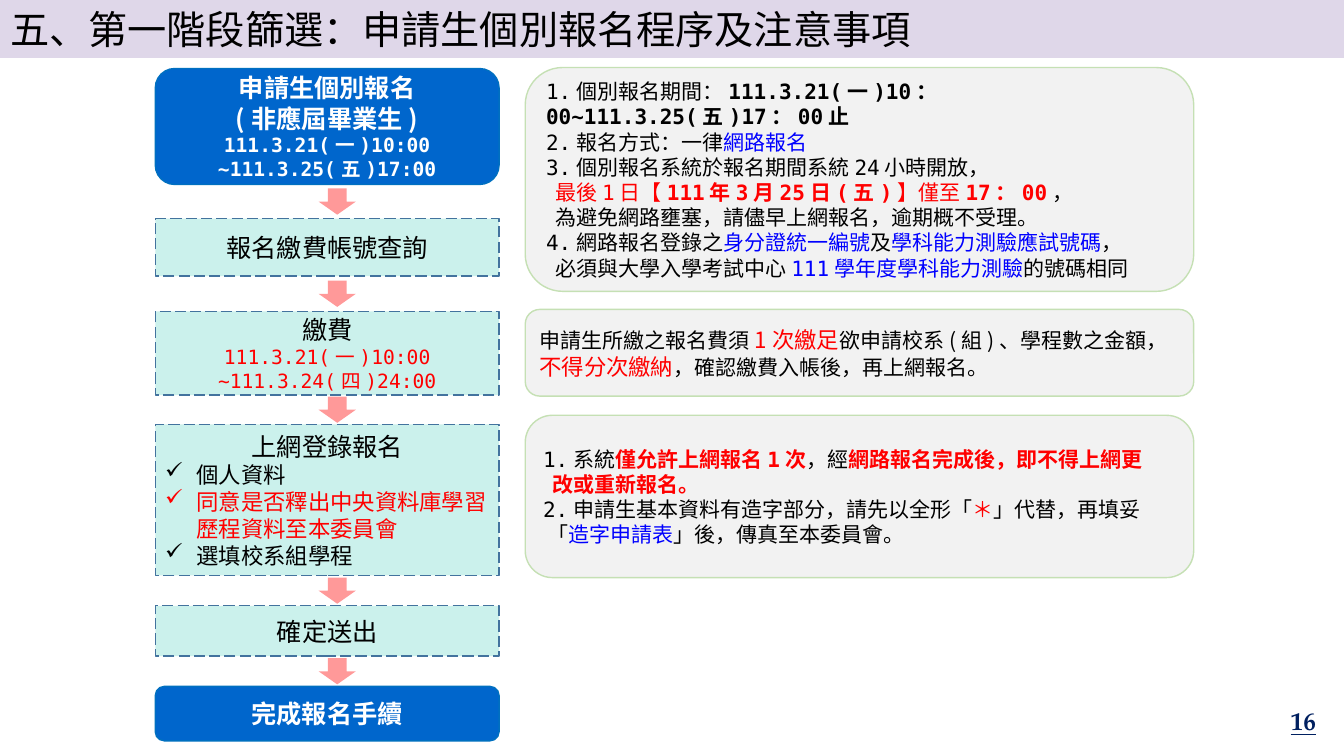
from itertools import pairwise
from lxml import etree
from pptx import Presentation
from pptx.dml.color import RGBColor
from pptx.enum import dml, shapes, text
from pptx.oxml import ns
from pptx.util import Inches, Pt

SANS, MONO, SERIF = "Noto Sans CJK JP", "DejaVu Sans Mono", "TeX Gyre Pagella"
BLACK, WHITE, RED, BLUE = "000000", "FFFFFF", "FF0000", "0000FF"
RECT, ROUND = shapes.MSO_SHAPE.RECTANGLE, shapes.MSO_SHAPE.ROUNDED_RECTANGLE
LEFT, CENTER, RIGHT = text.PP_ALIGN.LEFT, text.PP_ALIGN.CENTER, text.PP_ALIGN.RIGHT
STEP_X, STEP_W, NOTE_X, NOTE_W = 1.54, 3.41, 5.21, 6.63


def rgb(value):
    return RGBColor.from_string(value)


def add_run(p, words, size, color=BLACK, bold=False, font=SANS):
    r = p.add_run()
    r.text = words
    f = r.font
    f.size, f.name, f.bold = Pt(size), font, bold
    f.color.rgb = rgb(color)
    etree.SubElement(r._r.get_or_add_rPr(), ns.qn("a:ea"), typeface=SANS)
    return r


def add_line(tf, runs, align=LEFT, indent=0, bullet=None):
    """Add a paragraph of (words, size, color, bold, font) runs."""
    p = tf.paragraphs[0] if not tf.text else tf.add_paragraph()
    p.alignment = align
    p.space_before = Pt(0)
    p.line_spacing = Pt(1.2 * max(run[1] for run in runs))
    pPr = p._p.get_or_add_pPr()
    pPr.set("marL", str(Inches(indent)))
    if bullet:
        pPr.set("indent", str(-Inches(indent)))
        etree.SubElement(pPr, ns.qn("a:buChar"), char=bullet)
    for run in runs:
        add_run(p, *run)


def style_box(sp, fill, line, dash=None):
    sp.fill.solid()
    sp.fill.fore_color.rgb = rgb(fill)
    sp.line.color.rgb = rgb(line)
    sp.line.width = Pt(1)
    if dash:
        sp.line.dash_style = dash
    tf = sp.text_frame
    tf.word_wrap = True
    tf.vertical_anchor = text.MSO_ANCHOR.MIDDLE
    return tf


def add_box(s, kind, box, fill, line, dash=None):
    sp = s.shapes.add_shape(kind, *map(Inches, box))
    sp.shadow.inherit = False
    return style_box(sp, fill, line, dash)


def add_title(s, words, w, h):
    sp = s.shapes.title
    sp.left, sp.top, sp.width, sp.height = map(Inches, (0, 0, w, h))
    tf = style_box(sp, "DFD7E9", "DFD7E9")
    tf.auto_size = text.MSO_AUTO_SIZE.NONE
    add_line(tf, [(words, 28)])


def add_endpoint(s, top, height, heads, dates=()):
    tf = add_box(s, ROUND, (STEP_X, top, STEP_W, height), "0066CC", "0070C0")
    for words in heads:
        add_line(tf, [(words, 18, WHITE, True)], CENTER)
    for words in dates:
        add_line(tf, [(words, 14, WHITE, True, MONO)], CENTER)


def add_step(s, top, height, head, dates=(), checks=()):
    tf = add_box(s, RECT, (STEP_X, top, STEP_W, height), "CBF1EC", "43739E",
                 dml.MSO_LINE.LONG_DASH)
    add_line(tf, [(head, 18)], CENTER)
    for words in dates:
        add_line(tf, [(words, 14, RED, False, MONO)], CENTER)
    for words, color in checks:
        add_line(tf, [(words, 16, color)], indent=0.31, bullet="✓")


def add_arrow(s, upper, lower, w=0.37, h=0.26):
    """Centre a down arrow between two heights."""
    x = STEP_X + STEP_W / 2 + 0.1 - w / 2
    sp = s.shapes.add_shape(shapes.MSO_SHAPE.DOWN_ARROW, Inches(x),
                            Inches((upper + lower - h) / 2), Inches(w), Inches(h))
    sp.shadow.inherit = False
    sp.fill.solid()
    sp.fill.fore_color.rgb = rgb("FF9999")
    sp.line.fill.background()


def add_note(s, top, height, lines, font=MONO):
    """Lines are (indent, runs), and runs are (words, color, bold, size)."""
    tf = add_box(s, ROUND, (NOTE_X, top, NOTE_W, height), "F2F2F2", "C5E0B4")
    for indent, runs in lines:
        add_line(tf, [(words, size, color, bold, font)
                      for words, color, bold, size in runs], indent=indent)


def plain(words, color=BLACK, size=15):
    return words, color, False, size


def strong(words, color=BLACK):
    return words, color, True, 15


def add_page_number(s, number):
    sp = s.shapes.add_textbox(*map(Inches, (10.15, 6.95, 3, 0.4)))
    tf = sp.text_frame
    tf.word_wrap = True
    tf.vertical_anchor = text.MSO_ANCHOR.MIDDLE
    p = tf.paragraphs[0]
    p.alignment = RIGHT
    add_run(p, number, 18, "002060", True, SERIF).font.underline = True


def main():
    prs = Presentation()
    prs.slide_width, prs.slide_height = Inches(13.33), Inches(7.5)
    s = prs.slides.add_slide(prs.slide_layouts[5])
    add_title(s, "五、第一階段篩選：申請生個別報名程序及注意事項", 13.33, 0.57)

    spans = [(0.68, 1.15), (2.17, 0.57), (3.09, 0.83), (4.21, 1.5), (6.01, 0.5), (6.81, 0.54)]
    start, query, pay, register, submit, finish = spans
    add_endpoint(s, *start, ["申請生個別報名", "(非應屆畢業生)"],
                 ["111.3.21(一)10:00", "~111.3.25(五)17:00"])
    add_step(s, *query, "報名繳費帳號查詢")
    add_step(s, *pay, "繳費", dates=["111.3.21(一)10:00", "~111.3.24(四)24:00"])
    add_step(s, *register, "上網登錄報名", checks=[
        ("個人資料", BLACK),
        ("同意是否釋出中央資料庫學習歷程資料至本委員會", RED),
        ("選填校系組學程", BLACK)])
    add_step(s, *submit, "確定送出")
    add_endpoint(s, *finish, ["完成報名手續"])
    for (top, height), (next_top, _) in pairwise(spans):
        add_arrow(s, top + height, next_top)

    add_note(s, 0.67, 2.22, [
        (0, [plain("1.個別報名期間："), strong("111.3.21(一)10：00~111.3.25(五)17：00止")]),
        (0, [plain("2.報名方式：一律"), plain("網路報名", BLUE)]),
        (0, [plain("3.個別報名系統於報名期間系統24小時開放，")]),
        (0.09, [plain("最後1日【", RED), strong("111年3月25日(五)", RED), plain("】僅至", RED),
                strong("17：00", RED), plain("，")]),
        (0.09, [plain("為避免網路壅塞，請儘早上網報名，逾期概不受理。")]),
        (0, [plain("4.網路報名登錄之"), plain("身分證統一編號", BLUE), plain("及"),
             plain("學科能力測驗應試號碼", BLUE), plain("，")]),
        (0.09, [plain("必須與大學入學考試中心"), plain("111學年度學科能力測驗", BLUE),
                plain("的號碼相同")])])
    add_note(s, 3.07, 0.86, [
        (0, [plain("申請生所繳之報名費須"), plain("1次繳足", RED, 16),
             plain("欲申請校系(組)、學程數之金額，"), plain("不得分次繳納", RED, 16),
             plain("，確認繳費入帳後，再上網報名。")])], SANS)
    add_note(s, 4.12, 1.61, [
        (0, [plain("1.系統"), strong("僅允許上網報名1次", RED), plain("，經"),
             strong("網路報名完成後，即不得上網更", RED)]),
        (0.09, [strong("改或重新報名。", RED)]),
        (0, [plain("2.申請生基本資料有造字部分，請先以全形「"), plain("＊", RED),
             plain("」代替，再填妥")]),
        (0.04, [plain("「"), plain("造字申請表", BLUE), plain("」後，傳真至本委員會。")])])
    add_page_number(s, "16")
    prs.save("out.pptx")


if __name__ == "__main__":
    main()
